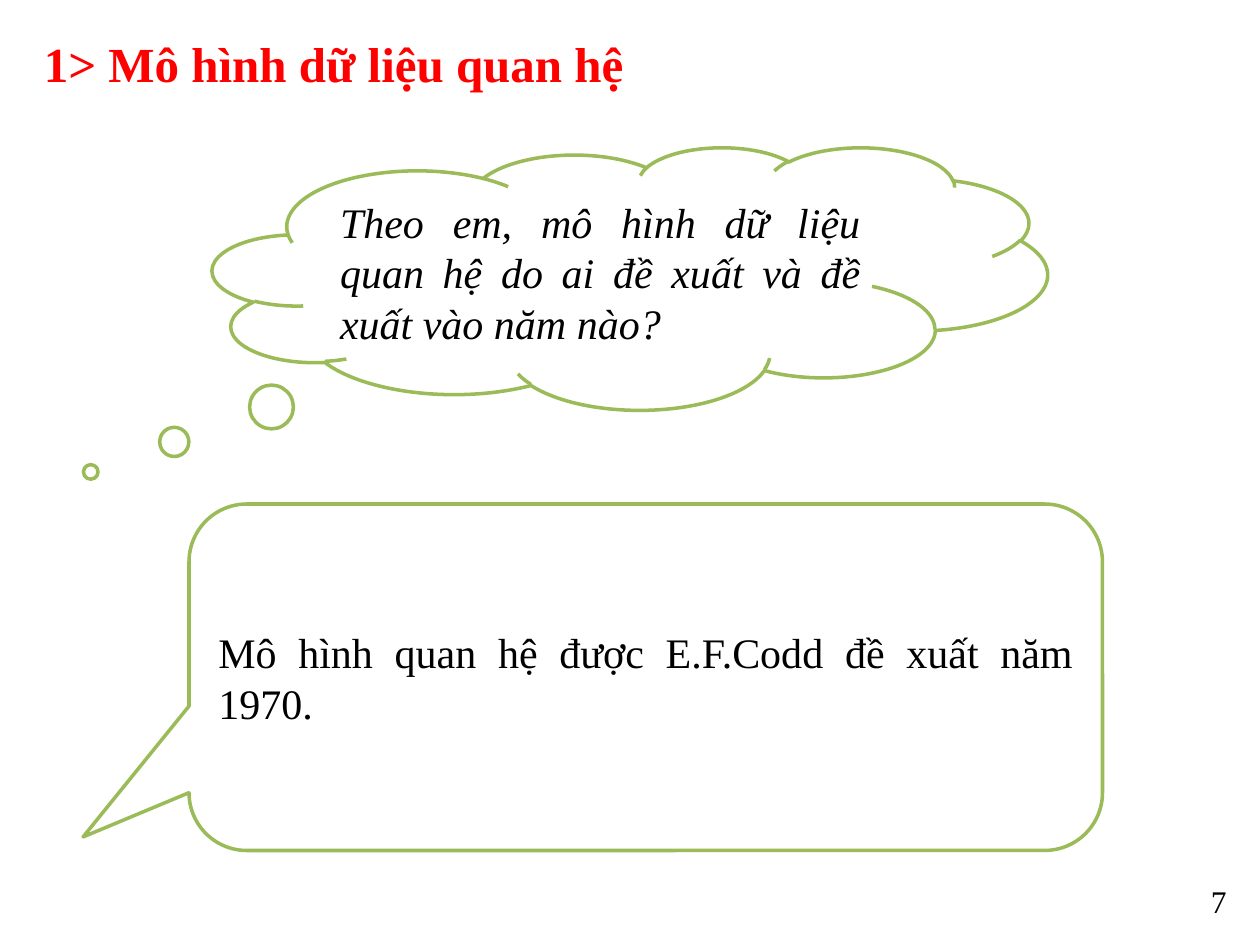
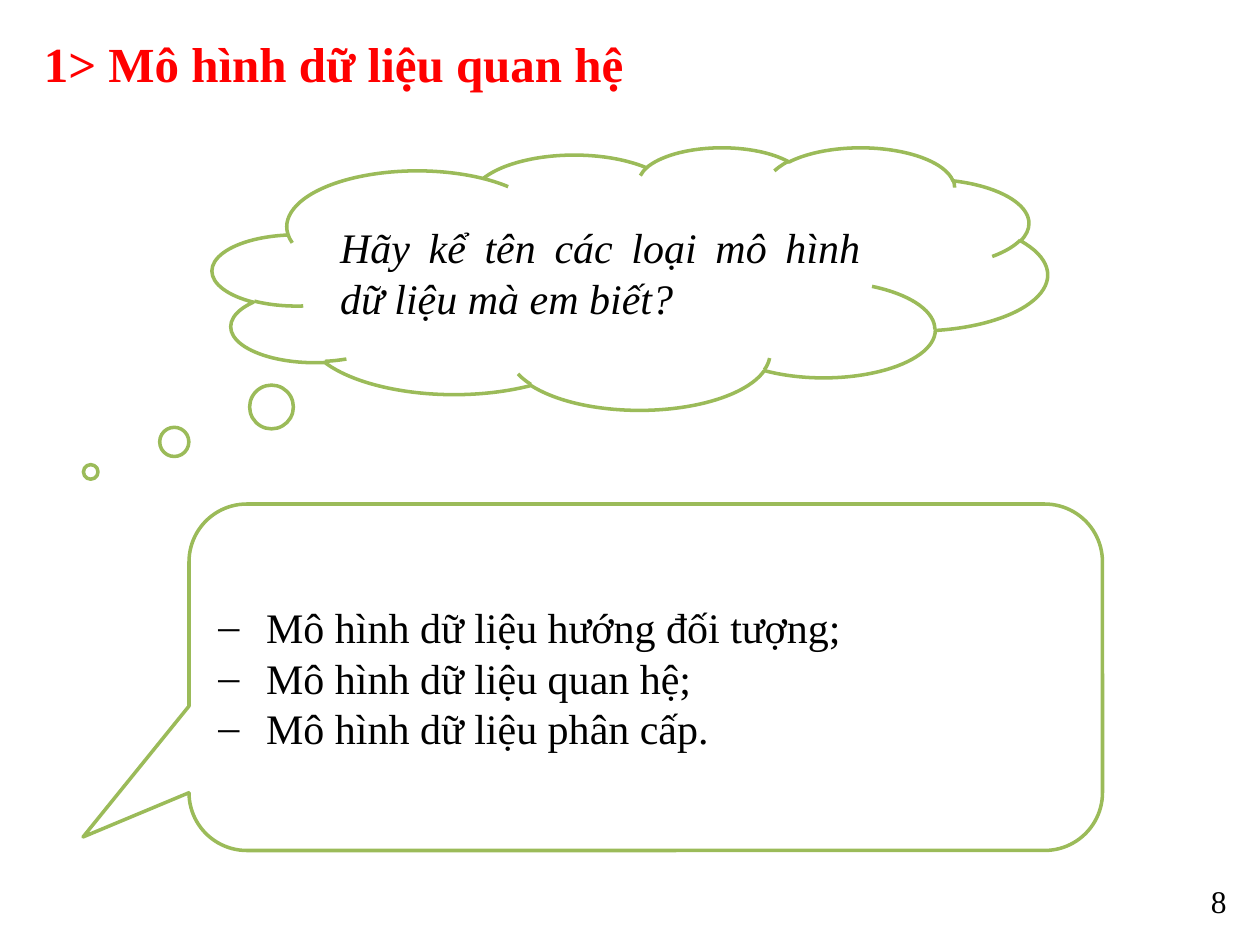
from dataclasses import dataclass

from lxml.etree import SubElement
from pptx import Presentation
from pptx.dml.color import RGBColor
from pptx.enum.shapes import MSO_SHAPE
from pptx.enum.text import MSO_ANCHOR, PP_ALIGN
from pptx.oxml.ns import qn
from pptx.util import Inches, Pt

COLUMNS, ROWS = 120, 90
BLANK_LAYOUT = 6


@dataclass(frozen=True)
class Theme:
    font: str = "Times New Roman"
    title_color: RGBColor = RGBColor(0xFF, 0x00, 0x00)
    text_color: RGBColor = RGBColor(0x00, 0x00, 0x00)
    fill_color: RGBColor = RGBColor(0xFF, 0xFF, 0xFF)
    outline_color: RGBColor = RGBColor(0x9B, 0xBB, 0x59)
    outline_width: Pt = Pt(2)
    title_size: Pt = Pt(28)
    body_size: Pt = Pt(24)
    number_size: Pt = Pt(18)
    bullet_indent: Inches = Inches(0.38)


THEME = Theme()


def add_bullet(paragraph, character, indent):
    properties = paragraph._p.get_or_add_pPr()
    properties.set("marL", str(indent))
    properties.set("indent", str(-indent))
    SubElement(properties, qn("a:buFont"), typeface=THEME.font)
    SubElement(properties, qn("a:buChar"), char=character)


def write_text(shape, lines, *, size=THEME.body_size, color=THEME.text_color, bold=False,
               italic=False, align=PP_ALIGN.JUSTIFY, anchor=MSO_ANCHOR.MIDDLE, bullet=None):
    frame = shape.text_frame
    frame.word_wrap = True
    frame.vertical_anchor = anchor
    frame.text = "\n".join(lines)
    for paragraph in frame.paragraphs:
        paragraph.alignment = align
        if bullet:
            add_bullet(paragraph, bullet, THEME.bullet_indent)
        for run in paragraph.runs:
            font = run.font
            font.name, font.size = THEME.font, size
            font.bold, font.italic = bold, italic
            font.color.rgb = color


class Deck:
    def __init__(self, theme):
        self.theme = theme
        self.presentation = Presentation()
        self.presentation.slide_width = Inches(10)
        self.presentation.slide_height = Inches(7.5)
        self.slide = None

    def place(self, left, top, width, height):
        column = self.presentation.slide_width / COLUMNS
        row = self.presentation.slide_height / ROWS
        return int(left * column), int(top * row), int(width * column), int(height * row)

    def add_slide(self, title, number):
        layout = self.presentation.slide_layouts[BLANK_LAYOUT]
        self.slide = self.presentation.slides.add_slide(layout)
        self.add_text((3, 1.5, 104, 9), title, size=self.theme.title_size,
                      color=self.theme.title_color, bold=True)
        self.add_text((90, 83.4, 28, 4.8), str(number), size=self.theme.number_size,
                      align=PP_ALIGN.RIGHT, anchor=MSO_ANCHOR.TOP)

    def add_text(self, area, text, **text_format):
        box = self.slide.shapes.add_textbox(*self.place(*area))
        write_text(box, [text], **text_format)

    def add_callout(self, kind, area, adjustments, lines, **text_format):
        callout = self.slide.shapes.add_shape(kind, *self.place(*area))
        for index, value in enumerate(adjustments):
            callout.adjustments[index] = value
        callout.shadow.inherit = False
        callout.fill.solid()
        callout.fill.fore_color.rgb = self.theme.fill_color
        callout.line.color.rgb = self.theme.outline_color
        callout.line.width = self.theme.outline_width
        write_text(callout, lines, **text_format)

    def add_question(self, text):
        self.add_callout(MSO_SHAPE.CLOUD_CALLOUT, (20.25, 14, 79.5, 25),
                         (-0.646, 0.738), [text], italic=True)

    def add_answer(self, lines, bullet=None):
        self.add_callout(MSO_SHAPE.ROUNDED_RECTANGULAR_CALLOUT, (18, 48, 87, 33),
                         (-0.616, 0.461, 0.167), lines, bullet=bullet)


def main():
    title = "1> Mô hình dữ liệu quan hệ"
    deck = Deck(THEME)

    deck.add_slide(title, 7)
    deck.add_question("Theo em, mô hình dữ liệu quan hệ do ai đề xuất và đề xuất vào năm nào?")
    deck.add_answer(["Mô hình quan hệ được E.F.Codd đề xuất năm 1970."])

    deck.add_slide(title, 8)
    deck.add_question("Hãy kể tên các loại mô hình dữ liệu mà em biết?")
    deck.add_answer([
        "Mô hình dữ liệu hướng đối tượng;",
        "Mô hình dữ liệu quan hệ;",
        "Mô hình dữ liệu phân cấp.",
    ], bullet="‒")

    deck.presentation.save("out.pptx")


if __name__ == "__main__":
    main()
